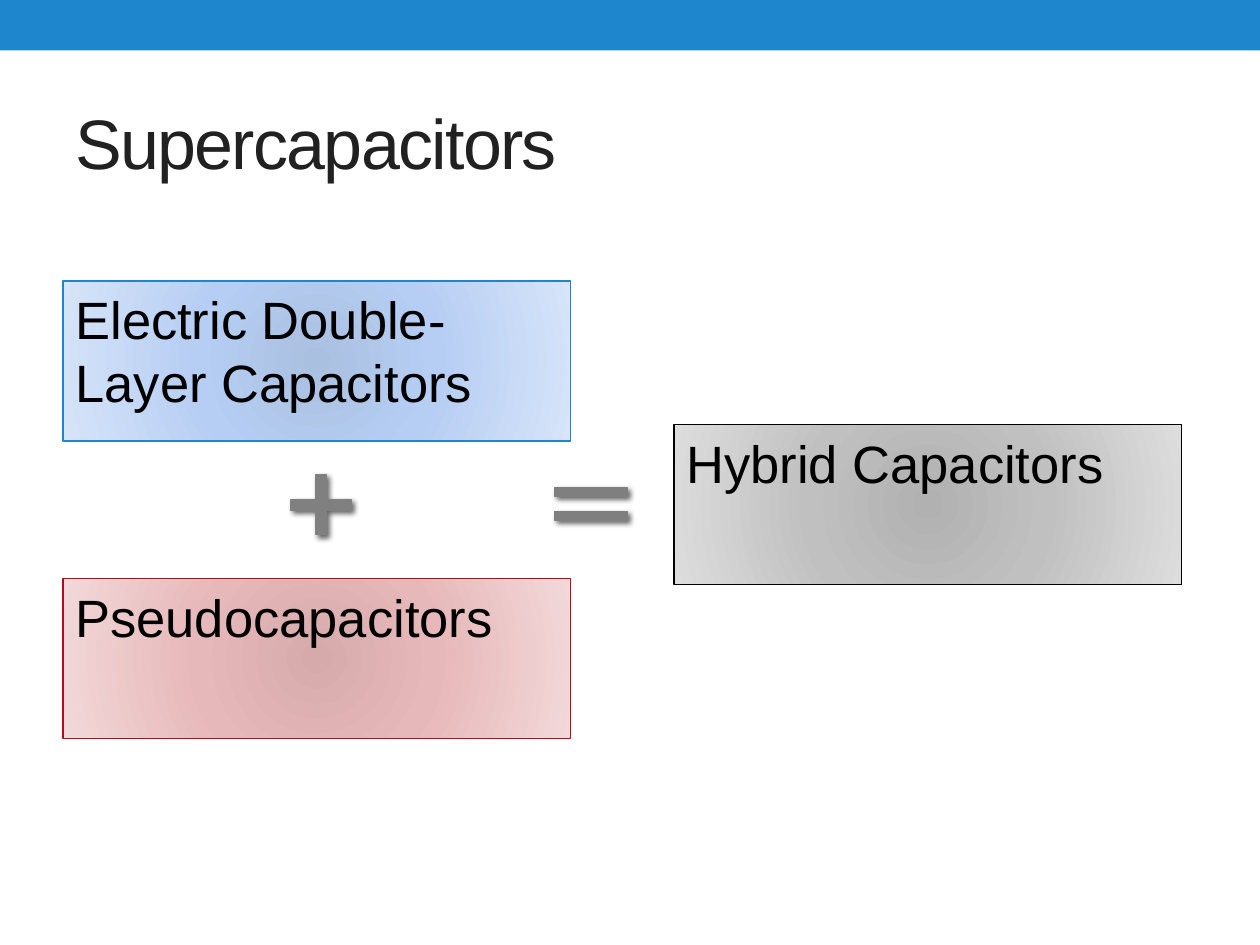
from dataclasses import dataclass

from lxml.etree import SubElement
from pptx import Presentation
from pptx.dml.color import RGBColor
from pptx.enum.shapes import MSO_SHAPE as Shape
from pptx.enum.text import MSO_ANCHOR as Anchor, PP_ALIGN as Align
from pptx.oxml import parse_xml
from pptx.oxml.ns import nsdecls, qn
from pptx.util import Pt


@dataclass(frozen=True)
class Theme:
    font: str = "Arial"
    title_size: float = 40
    body_size: float = 30
    line_width: float = 0.75
    bar: str = "1D86CD"
    title: str = "212121"
    text: str = "000000"
    plus: str = "808080"
    equals: str = "7F7F7F"
    # Each card style is its line colour and its gradient, from centre to edge.
    blue: tuple = ("1D86CD", ("A9C0E1", "B6CEF3", "D7E4F9"))
    red: tuple = ("B50B1B", ("D6AAAB", "E7B8B9", "F2D8D9"))
    grey: tuple = ("000000", ("B1B1B1", "C0C0C0", "DDDDDD"))


THEME = Theme()
CARD_WIDTH, CARD_HEIGHT = 290, 91.5
LEFT, RIGHT = 36, 385.2


def color(value):
    return RGBColor.from_string(value)


def format_text(paragraph, size, value):
    paragraph.alignment = Align.LEFT
    for run in paragraph.runs:
        run.font.name = THEME.font
        run.font.size = Pt(size)
        run.font.color.rgb = color(value)


def add_plain_shape(slide, kind, box, line):
    shape = slide.shapes.add_shape(kind, *map(Pt, box))
    shape.shadow.inherit = False
    shape.line.color.rgb = color(line)
    shape.line.width = Pt(THEME.line_width)
    return shape


def fill_radial(shape, colors):
    stops = "".join(
        f'<a:gs pos="{position}"><a:srgbClr val="{value}"/></a:gs>'
        for position, value in zip((0, 45000, 100000), colors))
    gradient = parse_xml(
        f'<a:gradFill {nsdecls("a")} rotWithShape="1"><a:gsLst>{stops}</a:gsLst>'
        '<a:path path="circle"><a:fillToRect l="100000" t="100000" '
        'r="100000" b="100000"/></a:path></a:gradFill>')
    shape._element.spPr.find(qn("a:prstGeom")).addnext(gradient)


def add_shadow(shape):
    effects = shape._element.spPr.find(qn("a:effectLst"))
    shadow = SubElement(effects, qn("a:outerShdw"), blurRad=str(Pt(3)),
                        dist=str(Pt(2)), dir="2700000", rotWithShape="0")
    shade = SubElement(shadow, qn("a:srgbClr"), val="000000")
    SubElement(shade, qn("a:alpha"), val="60000")


def add_top_bar(slide, box):
    bar = add_plain_shape(slide, Shape.RECTANGLE, box, THEME.bar)
    bar.fill.solid()
    bar.fill.fore_color.rgb = color(THEME.bar)
    bar.line.fill.background()


def place_title(slide, box, text):
    title = slide.shapes.title
    title.left, title.top, title.width, title.height = map(Pt, box)
    frame = title.text_frame
    frame.text = text
    frame.vertical_anchor = Anchor.MIDDLE
    paragraph = frame.paragraphs[0]
    format_text(paragraph, THEME.title_size, THEME.title)
    paragraph.runs[0].font._element.set("spc", "-100")


def add_card(slide, box, text, style):
    line, gradient = style
    card = add_plain_shape(slide, Shape.RECTANGLE, box, line)
    fill_radial(card, gradient)
    frame = card.text_frame
    frame.text = text
    frame.word_wrap = True
    frame.vertical_anchor = Anchor.TOP
    paragraph = frame.paragraphs[0]
    paragraph.space_before = Pt(3.6)
    format_text(paragraph, THEME.body_size, THEME.text)


def add_operator(slide, kind, box, value, adjustments):
    sign = add_plain_shape(slide, kind, box, value)
    sign.fill.solid()
    sign.fill.fore_color.rgb = color(value)
    for index, adjustment in enumerate(adjustments):
        sign.adjustments[index] = adjustment
    add_shadow(sign)


def main():
    presentation = Presentation()
    presentation.slide_width, presentation.slide_height = Pt(720), Pt(540)
    slide = presentation.slides.add_slide(presentation.slide_layouts[5])

    add_top_bar(slide, (0, 0, 720, 28.8))
    place_title(slide, (LEFT, 41.8, 648, 77.8), "Supercapacitors")
    for left, top, text, style in (
        (LEFT, 330.6, "Pseudocapacitors", THEME.red),
        (RIGHT, 242.6, "Hybrid Capacitors", THEME.grey),
        (LEFT, 160.6, "Electric Double-Layer Capacitors", THEME.blue),
    ):
        add_card(slide, (left, top, CARD_WIDTH, CARD_HEIGHT), text, style)
    add_operator(slide, Shape.MATH_PLUS, (160, 265, 46.8, 46.8),
                 THEME.plus, (0.135,))
    add_operator(slide, Shape.MATH_EQUAL, (309.6, 269.3, 56.2, 37.4),
                 THEME.equals, (0.136, 0.222))
    presentation.save("out.pptx")


if __name__ == "__main__":
    main()
